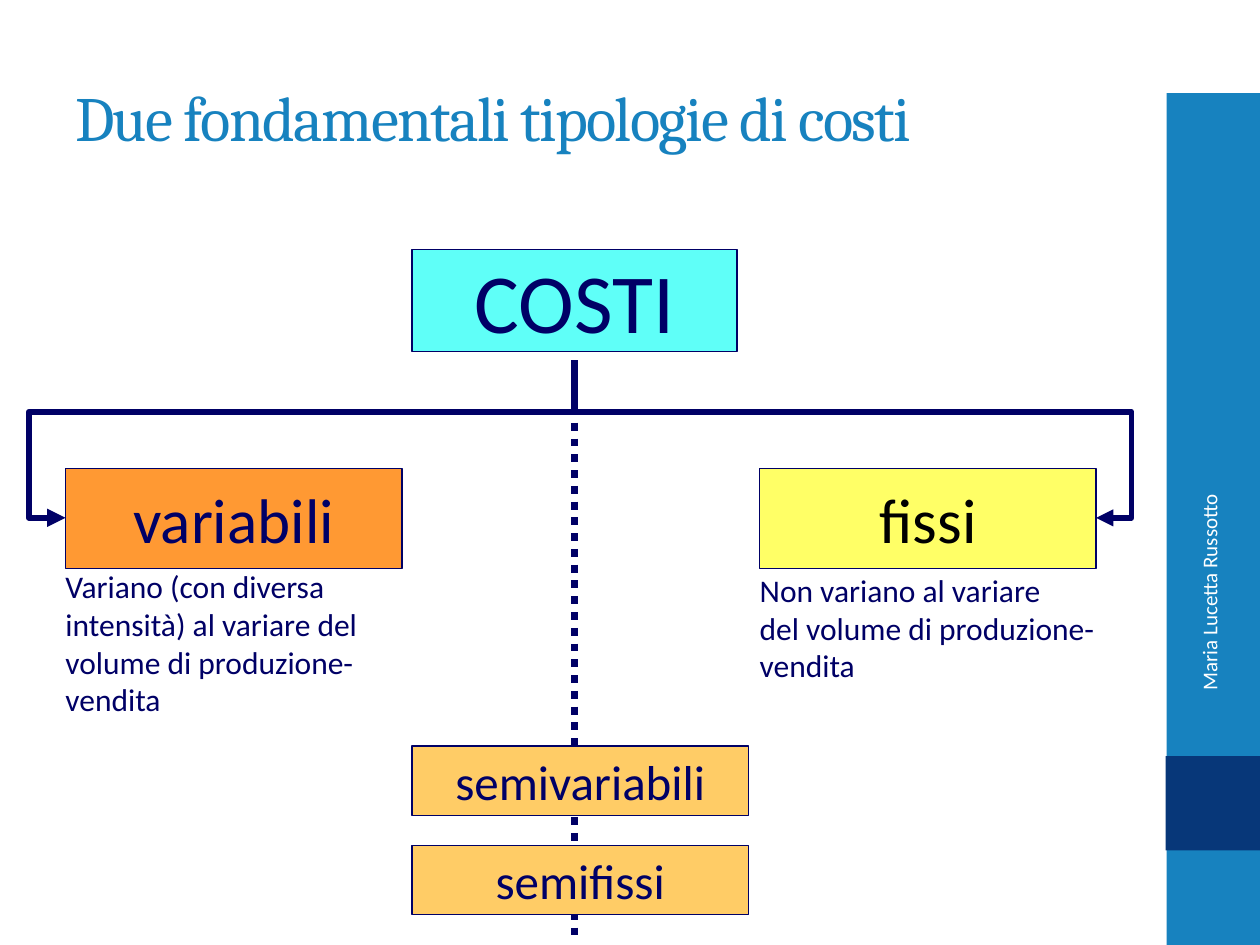
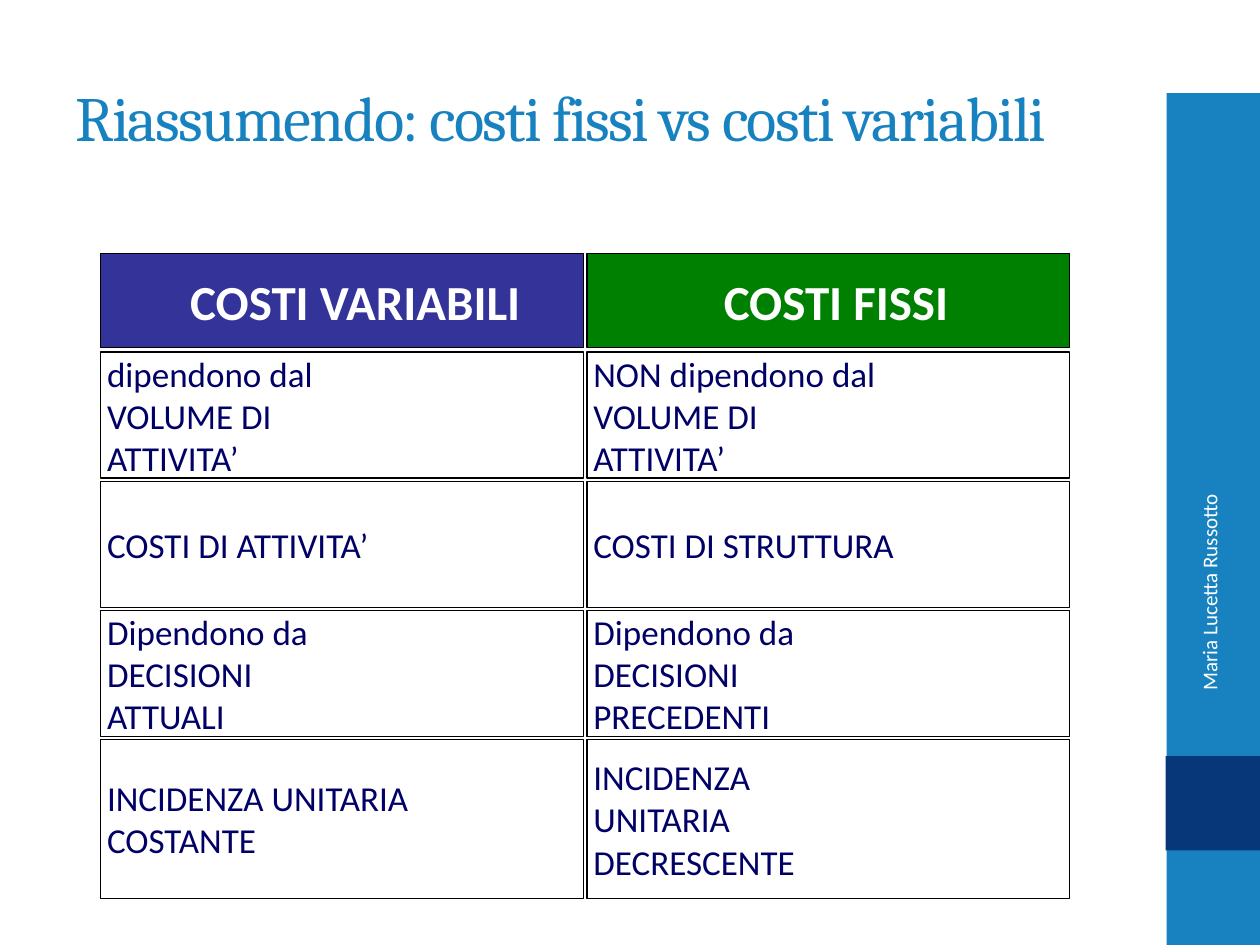
from collections import namedtuple

from lxml.etree import SubElement
from pptx import Presentation
from pptx.dml.color import RGBColor
from pptx.enum.dml import MSO_LINE
from pptx.enum.shapes import MSO_CONNECTOR, MSO_SHAPE
from pptx.enum.text import MSO_ANCHOR, PP_ALIGN
from pptx.oxml.ns import qn
from pptx.util import Inches, Pt

SLIDE_WIDTH, SLIDE_HEIGHT = Inches(10), Inches(7.5)
COLUMN, ROW = SLIDE_WIDTH / 100, SLIDE_HEIGHT / 75

BLUE = RGBColor(0x17, 0x82, 0xBF)
DEEP_BLUE = RGBColor(0x07, 0x37, 0x79)
NAVY = RGBColor(0x00, 0x00, 0x66)
WHITE = RGBColor(0xFF, 0xFF, 0xFF)
BLACK = RGBColor(0x00, 0x00, 0x00)
CYAN = RGBColor(0x5F, 0xFF, 0xF8)
ORANGE = RGBColor(0xFF, 0x99, 0x33)
YELLOW = RGBColor(0xFF, 0xFF, 0x66)
SAND = RGBColor(0xFF, 0xCC, 0x66)
INDIGO = RGBColor(0x33, 0x33, 0x99)
GREEN = RGBColor(0x00, 0x80, 0x00)

TITLE_AREA = (5, 3, 83.3, 12.5)
SIDEBAR_AREA = (92.5, 7.4, 7.6, 67.6)
DIAGRAM_AREA = (2.3, 19.8, 87.5, 54.4)
COMPARISON_AREA = (8, 20.1, 76.9, 51.2)


class Box(namedtuple("Box", "left top width height")):
    def inner(self, across, down, width, height):
        return Box(self.left + across, self.top + down, width, height)

    def emu(self):
        return (round(self.left * COLUMN), round(self.top * ROW),
                round(self.width * COLUMN), round(self.height * ROW))


def write(shape, text, size=18, color=NAVY, font="Calibri", bold=False,
          align=PP_ALIGN.LEFT, anchor=MSO_ANCHOR.MIDDLE,
          insets=(0.5, 0.5, 0.5, 0.5), spacing=None):
    frame = shape.text_frame
    frame.word_wrap = True
    frame.vertical_anchor = anchor
    (frame.margin_left, frame.margin_top, frame.margin_right,
     frame.margin_bottom) = (round(inset * COLUMN) for inset in insets)
    for index, line in enumerate(text.split("\n")):
        paragraph = frame.add_paragraph() if index else frame.paragraphs[0]
        paragraph.alignment = align
        run = paragraph.add_run()
        run.text = line
        run.font.size = Pt(size)
        run.font.name = font
        run.font.bold = bold
        run.font.color.rgb = color
        if spacing is not None:
            run._r.get_or_add_rPr().set("spc", str(spacing))


def add_text(slide, box, text, **text_format):
    caption = slide.shapes.add_textbox(*box.emu())
    write(caption, text, **text_format)
    return caption


def add_panel(slide, box, fill=None, outline=None):
    panel = slide.shapes.add_shape(MSO_SHAPE.RECTANGLE, *box.emu())
    panel.shadow.inherit = False
    if fill is None:
        panel.fill.background()
    else:
        panel.fill.solid()
        panel.fill.fore_color.rgb = fill
    if outline is None:
        panel.line.fill.background()
    else:
        panel.line.color.rgb = outline
        panel.line.width = Pt(0.75)
    return panel


def add_branch(slide, points, weight):
    (start_x, start_y), *bends = points
    builder = slide.shapes.build_freeform(
        round(start_x * COLUMN), round(start_y * ROW))
    builder.add_line_segments(
        [(round(x * COLUMN), round(y * ROW)) for x, y in bends], close=False)
    branch = builder.convert_to_shape()
    branch.shadow.inherit = False
    branch.fill.background()
    branch.line.color.rgb = NAVY
    branch.line.width = Pt(weight)
    SubElement(branch._element.spPr.find(qn("a:ln")), qn("a:tailEnd"),
               type="triangle")


def add_dotted_trunk(slide, x, top, bottom):
    trunk = slide.shapes.add_connector(
        MSO_CONNECTOR.STRAIGHT, round(x * COLUMN), round(top * ROW),
        round(x * COLUMN), round(bottom * ROW))
    trunk.line.color.rgb = NAVY
    trunk.line.width = Pt(4.5)
    trunk.line.dash_style = MSO_LINE.ROUND_DOT
    SubElement(trunk._element.spPr, qn("a:effectLst"))


def add_sidebar(slide, box):
    add_panel(slide, box.inner(0.1, 0, 7.5, box.height), BLUE)
    add_panel(slide, box.inner(0, 52.6, 7.5, 7.5), DEEP_BLUE)
    author = add_text(slide, box.inner(-9.5, 36.9, 25.9, 4),
                      "Maria Lucetta Russotto", size=12, color=WHITE,
                      align=PP_ALIGN.CENTER, insets=(1, 0.5, 2.4, 0.5))
    author.rotation = 270


def start_slide(deck, title):
    slide = deck.slides.add_slide(deck.slide_layouts[6])
    add_sidebar(slide, Box(*SIDEBAR_AREA))
    add_text(slide, Box(*TITLE_AREA), title, size=36, color=BLUE,
             font="Cambria", spacing=-100, insets=(1, 0.5, 1, 0.5))
    return slide


def add_cost_tree(slide, box):
    trunk_x = box.left + 43.3
    fork_y = box.top + 12.9
    arrow_y = box.top + 21.3
    node_width, node_height = 26.7, 7.9
    variable = box.inner(2.9, 17.4, node_width, node_height)
    fixed = box.inner(58, 17.4, node_width, node_height)

    branches = (
        (box.left, variable.left, 3.5),
        (box.left + box.width, fixed.left + node_width, 3.25),
    )
    for outer_x, node_x, weight in branches:
        add_branch(slide, [(trunk_x, box.top + 8.8), (trunk_x, fork_y),
                           (outer_x, fork_y), (outer_x, arrow_y),
                           (node_x, arrow_y)], weight)
    add_dotted_trunk(slide, trunk_x, box.top + 12.5, box.top + box.height)

    root = add_panel(slide, box.inner(30.4, 0, 25.8, 8.1), CYAN, NAVY)
    write(root, "COSTI", size=48, align=PP_ALIGN.CENTER,
          anchor=MSO_ANCHOR.TOP, insets=(0, 0, 0, 0))

    nodes = (
        (variable, "variabili", ORANGE, NAVY, 36),
        (fixed, "fissi", YELLOW, BLACK, 36),
        (box.inner(30.4, 39.4, node_width, 5.5), "semivariabili", SAND, NAVY, 28),
        (box.inner(30.4, 47.3, node_width, 5.5), "semifissi", SAND, NAVY, 28),
    )
    for place, name, fill, color, size in nodes:
        node = add_panel(slide, place, fill, NAVY)
        write(node, name, size=size, color=color, align=PP_ALIGN.CENTER)

    definitions = (
        (variable.inner(0, 7.8, node_width, 12.1),
         "Variano (con diversa intensità) al variare del volume di "
         "produzione-vendita"),
        (fixed.inner(0, 8.1, node_width, 9.1),
         "Non variano al variare\ndel volume di produzione-vendita"),
    )
    for place, definition in definitions:
        add_text(slide, place, definition, anchor=MSO_ANCHOR.TOP,
                 insets=(0, 0, 0, 0))


def add_comparison(slide, box):
    cell_width, column_step = 38.3, 38.6
    headings = (("COSTI VARIABILI", INDIGO, 2.6), ("COSTI FISSI", GREEN, 1.7))
    for column, (heading, fill, indent) in enumerate(headings):
        place = box.inner(column * column_step, 0, cell_width, 7.5)
        write(add_panel(slide, place, fill, BLACK), heading, size=28,
              color=WHITE, bold=True, align=PP_ALIGN.CENTER,
              insets=(indent, 0.5, 0.5, 0.5))

    wide, narrow = 0.5, 14.3
    rows = (
        (10, ("dipendono dal\nVOLUME DI ATTIVITA’", narrow),
         ("NON dipendono dal\nVOLUME DI ATTIVITA’", narrow)),
        (10, ("COSTI DI ATTIVITA’", wide), ("COSTI DI STRUTTURA", wide)),
        (10, ("Dipendono da DECISIONI\nATTUALI", narrow),
         ("Dipendono da DECISIONI\nPRECEDENTI", narrow)),
        (12.6, ("INCIDENZA UNITARIA\nCOSTANTE", wide),
         ("INCIDENZA UNITARIA\nDECRESCENTE", narrow)),
    )
    for row, (height, *cells) in enumerate(rows):
        for column, (statement, right_inset) in enumerate(cells):
            place = box.inner(column * column_step, 7.85 + row * 10.25,
                              cell_width, height)
            write(add_panel(slide, place, outline=BLACK), statement, size=20,
                  insets=(0.5, 0.5, right_inset, 0.5))


def main():
    deck = Presentation()
    deck.slide_width, deck.slide_height = SLIDE_WIDTH, SLIDE_HEIGHT
    add_cost_tree(start_slide(deck, "Due fondamentali tipologie di costi"),
                  Box(*DIAGRAM_AREA))
    add_comparison(
        start_slide(deck, "Riassumendo: costi fissi vs costi variabili"),
        Box(*COMPARISON_AREA))
    deck.save("out.pptx")


if __name__ == "__main__":
    main()
